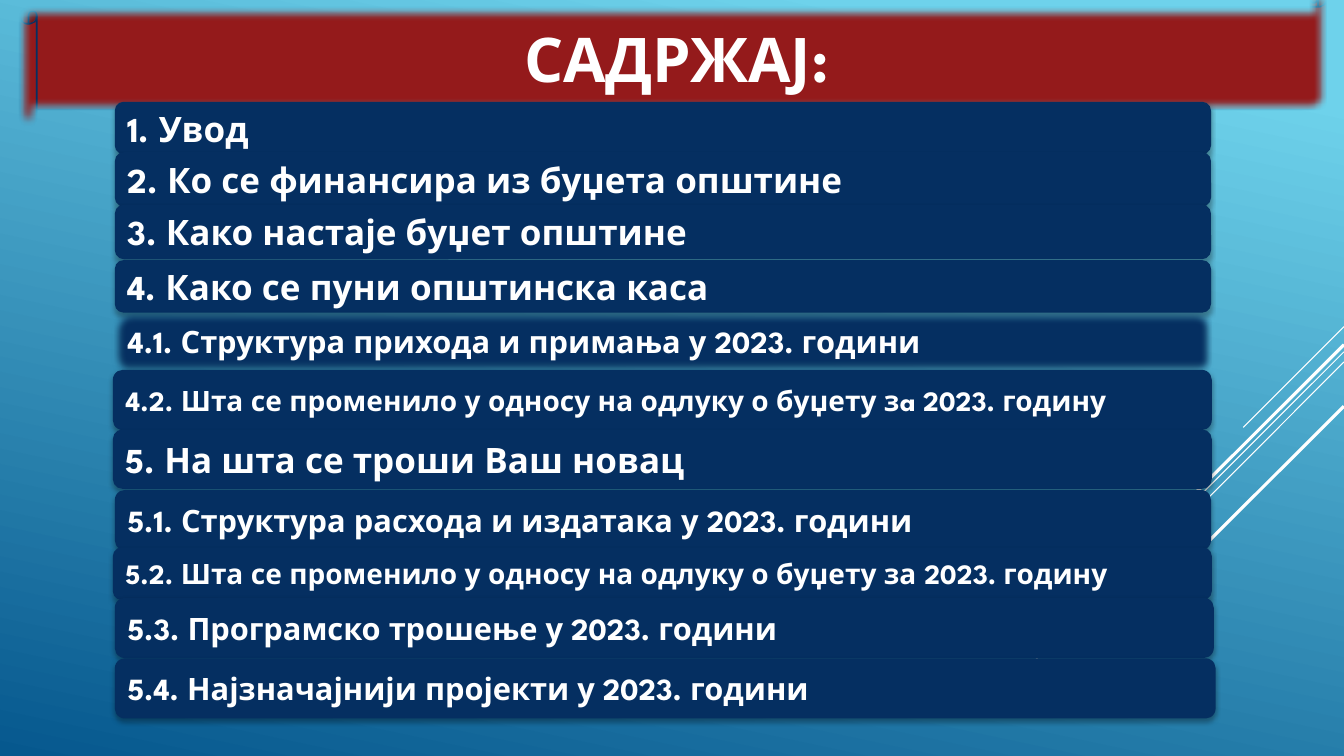
from lxml import etree
from pptx import Presentation
from pptx.dml.color import RGBColor
from pptx.enum import shapes, text
from pptx.oxml import ns
from pptx.util import Pt

COLORS = {
    "sky": "6ED2EB",
    "deep": "06588E",
    "banner": "941A1B",
    "navy": "052F61",
    "white": "FFFFFF",
    "shadow": "000000",
}
FONT = "League Spartan"
EMU = 12700

RAYS = [
    (960, 233.3, 888, 305.3, 0.75),
    (960, 251.3, 725, 486, 0.75),
    (960, 258.5, 810.7, 408.2, 0.75),
    (960, 246.2, 822.2, 383.8, 2.25),
    (960, 290.2, 859.7, 390.2, 2.25),
]

ENTRIES = [
    ("1. Увод", 25, 82, 72.7, 783, 37.5),
    ("2. Ко се финансира из буџета општине", 25, 82, 108.7, 783, 39),
    ("3. Како настаје буџет општине", 25, 82, 146.2, 783, 39),
    ("4. Како се пуни општинска каса", 25, 82, 185.8, 783, 37.5),
    ("4.1. Структура прихода и примања у 2023. години", 22, 82, 222.5, 783, 43),
    ("4.2. Шта се променило у односу на одлуку о буџету зa 2023. годину",
     20, 80.6, 264.2, 785, 43),
    ("5. На шта се троши Ваш новац", 25, 80.6, 306.7, 785, 42.5),
    ("5.1. Структура расхода и издатака у 2023. години", 22, 82, 350, 783, 43),
    ("5.2. Шта се променило у односу на одлуку о буџету за 2023. годину",
     20, 80.6, 391, 785, 37.5),
    ("5.3. Програмско трошење у 2023. години", 22, 82, 427, 785, 43),
    ("5.4. Најзначајнији пројекти у 2023. години", 22, 82, 470.2, 786.3, 43),
]
SOFT_ENTRY = "4.1."


def rgb(name):
    """Return the named colour."""
    return RGBColor.from_string(COLORS[name])


def set_all(target, values):
    """Set every attribute in the dict on the target."""
    for name, value in values.items():
        setattr(target, name, value)


def add_child(parent, tag, **attributes):
    """Append a DrawingML element and return it."""
    child = etree.SubElement(parent, ns.qn(tag))
    for name, value in attributes.items():
        child.set(name, str(value))
    return child


def paint_background(page):
    """Fill the page with the slanted blue gradient."""
    fill = page.background.fill
    fill.gradient()
    fill.gradient_angle = 258
    stops = zip(fill.gradient_stops, ((0.1, "sky"), (1, "deep")))
    for stop, (position, color) in stops:
        stop.position = position
        stop.color.rgb = rgb(color)


def add_ray(page, x1, y1, x2, y2, width):
    """Draw one white diagonal line."""
    ray = page.shapes.add_connector(
        shapes.MSO_CONNECTOR.STRAIGHT, Pt(x1), Pt(y1), Pt(x2), Pt(y2))
    ray.line.color.rgb = rgb("white")
    ray.line.width = Pt(width)
    add_child(ray._element.spPr, "a:effectLst")


def add_box(page, kind, frame, fill, words, size, align):
    """Add a filled shape with one line of bold white text."""
    box = page.shapes.add_shape(kind, *map(Pt, frame))
    box.shadow.inherit = False
    box.fill.solid()
    box.fill.fore_color.rgb = rgb(fill)
    box.line.fill.background()
    set_all(box.text_frame, {
        "word_wrap": True, "vertical_anchor": text.MSO_ANCHOR.MIDDLE})
    para = box.text_frame.paragraphs[0]
    para.alignment = align
    span = para.add_run()
    span.text = words
    set_all(span.font, {"name": FONT, "size": Pt(size), "bold": True})
    span.font.color.rgb = rgb("white")
    return box


def effects_of(box):
    """Return the effect list of a shape."""
    return box._element.spPr.find(ns.qn("a:effectLst"))


def add_shadow(box):
    """Give a shape a faint shadow below it."""
    shadow = add_child(
        effects_of(box), "a:outerShdw", blurRad=int(3.5 * EMU),
        dist=int(2.2 * EMU), dir=90 * 60000, algn="ctr", rotWithShape=0)
    color = add_child(shadow, "a:srgbClr", val=COLORS["shadow"])
    add_child(color, "a:alpha", val=32000)


def soften(box):
    """Blur the edges of a shape."""
    add_child(effects_of(box), "a:softEdge", rad=5 * EMU)


def add_banner(page):
    """Add the red scroll with the heading."""
    banner = add_box(
        page, shapes.MSO_SHAPE.HORIZONTAL_SCROLL, (13.7, -7.9, 933, 98),
        "banner", "САДРЖАЈ:", 44, text.PP_ALIGN.CENTER)
    banner.line.color.rgb = rgb("navy")
    banner.line.width = Pt(1.25)
    soften(banner)


def add_entry(page, words, size, *frame):
    """Add one navy bar of the contents list."""
    bar = add_box(page, shapes.MSO_SHAPE.ROUNDED_RECTANGLE, frame,
                  "navy", words, size, text.PP_ALIGN.LEFT)
    add_shadow(bar)
    if words.startswith(SOFT_ENTRY):
        soften(bar)


def main():
    """Build the contents slide and save it."""
    deck = Presentation()
    set_all(deck, {"slide_width": Pt(960), "slide_height": Pt(540)})
    page = deck.slides.add_slide(deck.slide_layouts[6])
    paint_background(page)
    for ray in RAYS:
        add_ray(page, *ray)
    add_banner(page)
    for entry in ENTRIES:
        add_entry(page, *entry)
    deck.save("out.pptx")


if __name__ == "__main__":
    main()
